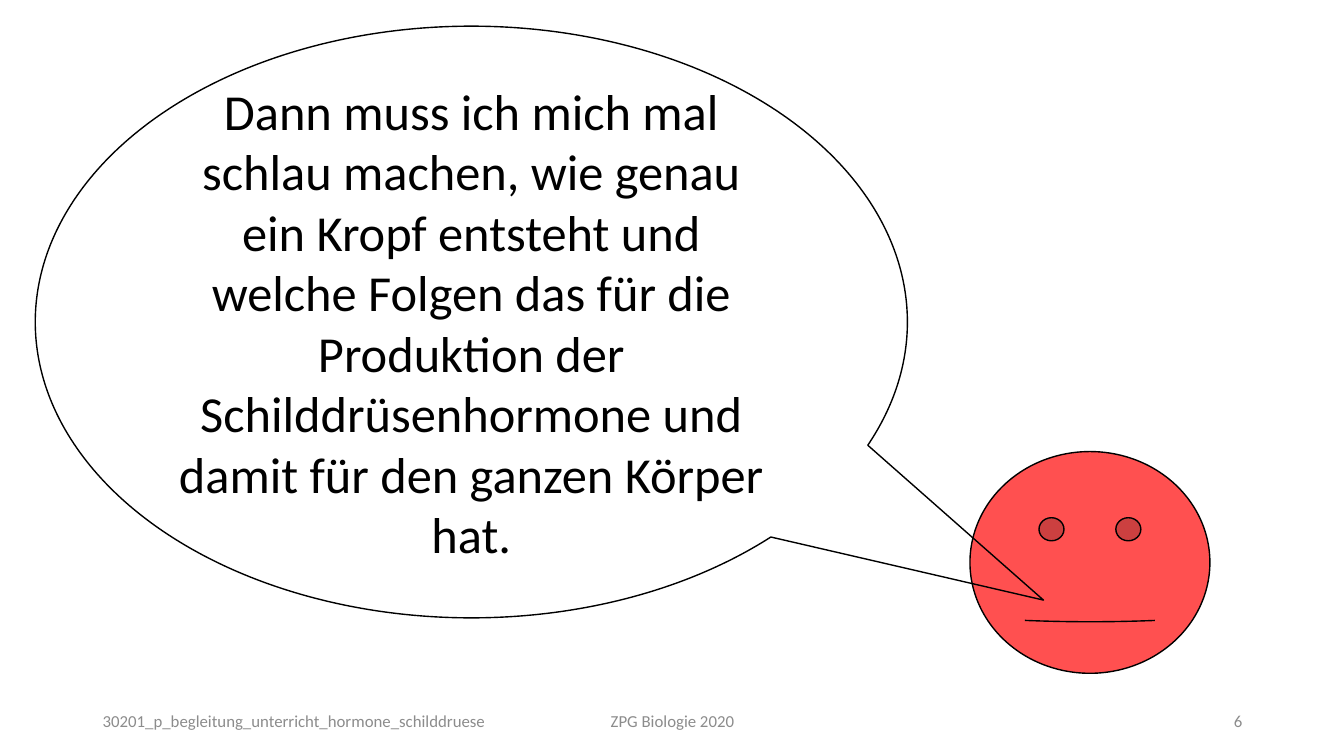
"""Build the slide with a red face and its large speech bubble."""
from pptx import Presentation
from pptx.dml.color import RGBColor
from pptx.enum.shapes import MSO_SHAPE
from pptx.enum.text import MSO_ANCHOR, PP_ALIGN
from pptx.util import Inches, Pt

FACE, BUBBLE = MSO_SHAPE.SMILEY_FACE, MSO_SHAPE.OVAL_CALLOUT
MIDDLE = MSO_ANCHOR.MIDDLE
LEFT, CENTER, RIGHT = PP_ALIGN.LEFT, PP_ALIGN.CENTER, PP_ALIGN.RIGHT
FONT = "Calibri"
COLORS = {"face": "FF5050", "ink": "000000", "foot": "8C8C8C"}

SPEECH = (
    "Dann muss ich mich mal schlau machen, wie genau ein Kropf entsteht "
    "und welche Folgen das für die Produktion der Schilddrüsenhormone "
    "und damit für den ganzen Körper hat."
)
SHAPES = [
    (FACE, (9.62, 4.48, 2.38, 2.2), (0.003,), "face", None),
    (BUBBLE, (0.35, 0.26, 8.65, 5.87), (0.656, 0.47), None, SPEECH),
]
FOOT_TOP, FOOT_HIGH = 6.95, 0.4
FOOTERS = [
    ("30201_p_begleitung_unterricht_hormone_schilddruese", 0.92, 4.25, LEFT),
    ("ZPG Biologie 2020", 4.42, 4.5, CENTER),
    ("6", 9.42, 3, RIGHT),
]


def color(name):
    return RGBColor.from_string(COLORS[name])


def write(shape, text, size, tint, align):
    frame = shape.text_frame
    frame.word_wrap = True
    frame.vertical_anchor = MIDDLE
    para = frame.paragraphs[0]
    para.alignment = align
    run = para.add_run()
    run.text = text
    run.font.name = FONT
    run.font.size = Pt(size)
    run.font.color.rgb = color(tint)


def draw(slide, kind, box, bends, fill, text):
    shape = slide.shapes.add_shape(kind, *map(Inches, box))
    shape.shadow.inherit = False
    for index, bend in enumerate(bends):
        shape.adjustments[index] = bend
    if fill:
        shape.fill.solid()
        shape.fill.fore_color.rgb = color(fill)
    else:
        shape.fill.background()
    shape.line.color.rgb = color("ink")
    shape.line.width = Pt(1)
    if text:
        write(shape, text, 36, "ink", CENTER)


def main():
    deck = Presentation()
    deck.slide_width, deck.slide_height = Inches(13.33), Inches(7.5)
    slide = deck.slides.add_slide(deck.slide_layouts[6])
    for item in SHAPES:
        draw(slide, *item)
    for text, left, width, align in FOOTERS:
        box = map(Inches, (left, FOOT_TOP, width, FOOT_HIGH))
        write(slide.shapes.add_textbox(*box), text, 12, "foot", align)
    deck.save("out.pptx")


if __name__ == "__main__":
    main()
